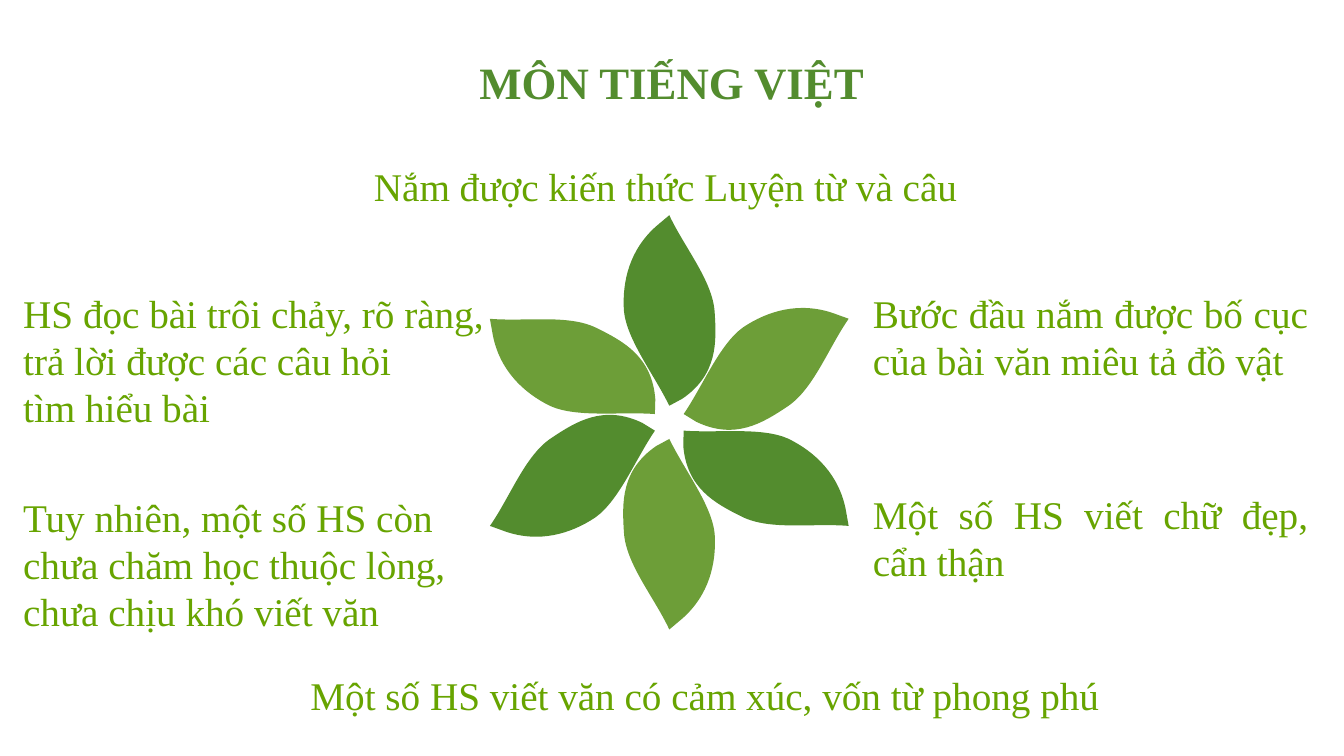
from math import cos, radians, sin

from lxml.etree import SubElement
from pptx import Presentation
from pptx.dml.color import RGBColor
from pptx.enum.text import MSO_AUTO_SIZE, PP_ALIGN
from pptx.oxml.ns import qn
from pptx.util import Inches, Pt

# Content: paragraphs, box (left, top, width, height) and wrapping
TITLE = (["MÔN TIẾNG VIỆT"], (4.1, 0.49, 5.13, 0.64), True)
REMARKS = [
    (["Nắm được kiến thức Luyện từ và câu"], (3.58, 1.55, 6.1, 0.6), False),
    (["Bước đầu nắm được bố cục của bài văn miêu tả đồ vật"],
     (8.53, 2.81, 4.58, 1.07), True),
    (["Một số HS viết chữ đẹp, cẩn thận"], (8.53, 4.8, 4.58, 1.07), True),
    (["HS đọc bài trôi chảy, rõ ràng,", "trả lời được các câu hỏi", "tìm hiểu bài"],
     (0.1, 2.81, 4.88, 1.54), False),
    (["Tuy nhiên, một số HS còn", "chưa chăm học thuộc lòng,", "chưa chịu khó viết văn"],
     (0.1, 4.83, 5.23, 1.54), True),
    (["Một số HS viết văn có cảm xúc, vốn từ phong phú"], (2.95, 6.6, 8.27, 0.6), True),
]

THEME = {
    "petals": ["538C2E", "6D9E38"],
    "title": {"name": "Times New Roman", "size": Pt(32), "bold": True, "color": "538C2E"},
    "remark": {"name": "Times New Roman", "size": Pt(28), "bold": False, "color": "67A400"},
}
TITLE_FRAME = {"margin_left": Inches(0.1), "margin_right": Inches(0.1),
               "margin_top": Inches(0.05), "margin_bottom": Inches(0.05)}
REMARK_FRAME = {"margin_left": Inches(0.13), "margin_right": Inches(0.13),
                "margin_top": Inches(0.06), "margin_bottom": Inches(0.06)}

# Flower: six turns of one petal around a centre
PETAL_COUNT = 6
FLOWER_CENTER = (6.64, 4.19)
FLOWER_RADIUS = 1.11
PETAL_TIP = (0.45, 0)
# Each segment ends at its last point; points before it are curve controls
PETAL_SEGMENTS = [
    [(0.6, 0.32), (0.88, 0.65), (0.9, 0.96)],
    [(0.92, 1.26), (0.93, 1.58), (0.58, 1.82)],
    [(0.45, 1.89)],
    [(0.3, 1.58), (0.03, 1.24), (0, 0.95)],
    [(-0.02, 0.65), (0.06, 0.34), (0.32, 0.11)],
    [PETAL_TIP],
]


def curve_segments(shape):
    """Turn the straight segments that have control points into curves."""
    lines = list(shape.element.iter(qn("a:lnTo")))
    for line, segment in zip(lines, PETAL_SEGMENTS):
        if len(segment) == 1:
            continue
        outline = line.getparent()
        curve = SubElement(outline, qn("a:cubicBezTo"))
        for x, y in segment:
            SubElement(curve, qn("a:pt"), x=str(Inches(x)), y=str(Inches(y)))
        outline.replace(line, curve)


def add_petal(slide, index):
    corners = [(Inches(x), Inches(y)) for x, y in (segment[-1] for segment in PETAL_SEGMENTS)]
    builder = slide.shapes.build_freeform(*map(Inches, PETAL_TIP))
    builder.add_line_segments(corners, close=True)
    shape = builder.convert_to_shape()
    curve_segments(shape)
    angle = index * 360 / PETAL_COUNT
    center_x = FLOWER_CENTER[0] + FLOWER_RADIUS * sin(radians(angle))
    center_y = FLOWER_CENTER[1] - FLOWER_RADIUS * cos(radians(angle))
    shape.left = Inches(center_x) - shape.width // 2
    shape.top = Inches(center_y) - shape.height // 2
    shape.rotation = angle
    shape.shadow.inherit = False
    shape.fill.solid()
    colors = THEME["petals"]
    shape.fill.fore_color.rgb = RGBColor.from_string(colors[index % len(colors)])
    shape.line.fill.background()


def add_text(slide, content, font_format, frame_format, alignment):
    lines, box, wrap = content
    frame = slide.shapes.add_textbox(*map(Inches, box)).text_frame
    frame.word_wrap = wrap
    frame.auto_size = MSO_AUTO_SIZE.SHAPE_TO_FIT_TEXT
    for name, value in frame_format.items():
        setattr(frame, name, value)
    for index, line in enumerate(lines):
        paragraph = frame.add_paragraph() if index else frame.paragraphs[0]
        paragraph.alignment = alignment
        run = paragraph.add_run()
        run.text = line
        for name, value in font_format.items():
            if name == "color":
                run.font.color.rgb = RGBColor.from_string(value)
            else:
                setattr(run.font, name, value)


def main():
    presentation = Presentation()
    presentation.slide_width = Inches(40 / 3)
    presentation.slide_height = Inches(7.5)
    slide = presentation.slides.add_slide(presentation.slide_layouts[6])

    # Flower
    for index in range(PETAL_COUNT):
        add_petal(slide, index)

    # Remarks around the flower, then the title
    for remark in REMARKS:
        add_text(slide, remark, THEME["remark"], REMARK_FRAME, PP_ALIGN.JUSTIFY)
    add_text(slide, TITLE, THEME["title"], TITLE_FRAME, PP_ALIGN.CENTER)

    presentation.save("out.pptx")


if __name__ == "__main__":
    main()
